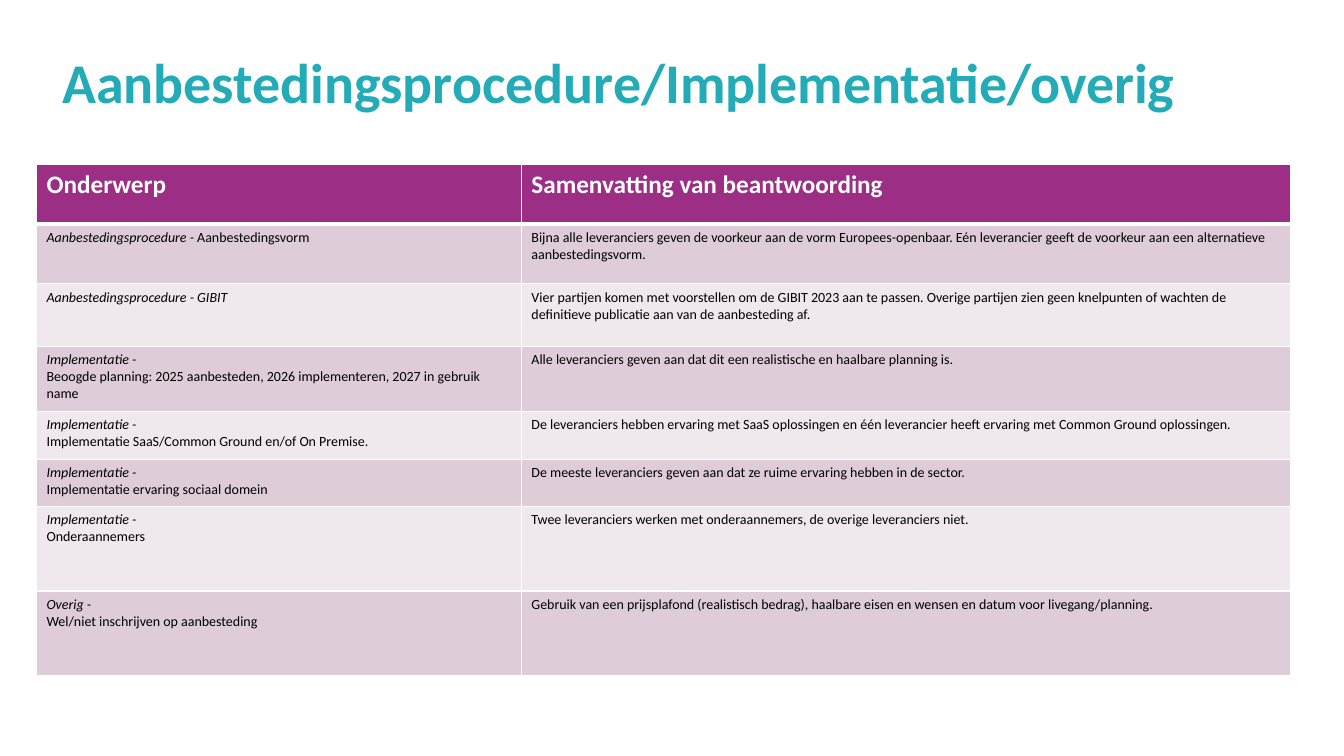
from lxml.etree import SubElement
from pptx import Presentation
from pptx.dml.color import RGBColor
from pptx.enum.text import MSO_ANCHOR
from pptx.oxml.ns import qn
from pptx.util import Cm, Pt


def paint(color_format, color):
    color_format.rgb = RGBColor.from_string(color)


def add_span(para, text, color, **formats):
    span = para.add_run()
    span.text = text
    for name, value in {"name": "Calibri", **formats}.items():
        setattr(span.font, name, value)
    paint(span.font.color, color)


TEAL, PURPLE, WHITE, BLACK = "23ABB7", "9C2F85", "FFFFFF", "000000"
BANDS = ["EFE8ED", "DECDD9"]

deck = Presentation()
deck.slide_width, deck.slide_height = Cm(33.87), Cm(19.05)
page = deck.slides.add_slide(deck.slide_layouts[6])

# Each row: height, italic lead, plain subject, whether the subject starts a new line, summary
rows = [
    (1.5, "", "Onderwerp", False, "Samenvatting van beantwoording"),
    (1.5, "Aanbestedingsprocedure - ", "Aanbestedingsvorm", False,
     "Bijna alle leveranciers geven de voorkeur aan de vorm Europees-openbaar. "
     "Eén leverancier geeft de voorkeur aan een alternatieve aanbestedingsvorm."),
    (1.58, "Aanbestedingsprocedure - GIBIT", "", False,
     "Vier partijen komen met voorstellen om de GIBIT 2023 aan te passen. Overige partijen "
     "zien geen knelpunten of wachten de definitieve publicatie aan van de aanbesteding af."),
    (1.63, "Implementatie -",
     "Beoogde planning: 2025 aanbesteden, 2026 implementeren, 2027 in gebruik name", True,
     "Alle leveranciers geven aan dat dit een realistische en haalbare planning is."),
    (1.22, "Implementatie -", "Implementatie SaaS/Common Ground en/of On Premise.", True,
     "De leveranciers hebben ervaring met SaaS oplossingen en één leverancier "
     "heeft ervaring met Common Ground oplossingen."),
    (1.18, "Implementatie -", "Implementatie ervaring sociaal domein", True,
     "De meeste leveranciers geven aan dat ze ruime ervaring hebben in de sector."),
    (2.13, "Implementatie -", "Onderaannemers", True,
     "Twee leveranciers werken met onderaannemers, de overige leveranciers niet."),
    (2.13, "Overig -", "Wel/niet inschrijven op aanbesteding", True,
     "Gebruik van een prijsplafond (realistisch bedrag), haalbare eisen en wensen "
     "en datum voor livegang/planning."),
]

# Table
frame = page.shapes.add_table(len(rows), 2, Cm(0.92), Cm(4.15), Cm(31.6), Cm(12.87))
table = frame.table
for column, width in zip(table.columns, (12.22, 19.38)):
    column.width = Cm(width)

for index, (height, lead, subject, new_line, summary) in enumerate(rows):
    table.rows[index].height = Cm(height)
    header = index == 0
    color = WHITE if header else BLACK
    formats = {"size": Pt(18 if header else 10), "bold": header}

    # Wording
    topic_cell, summary_cell = table.cell(index, 0), table.cell(index, 1)
    para = topic_cell.text_frame.paragraphs[0]
    if lead:
        add_span(para, lead, color, italic=True, **formats)
    if new_line:
        para = topic_cell.text_frame.add_paragraph()
    if subject:
        add_span(para, subject, color, **formats)
    add_span(summary_cell.text_frame.paragraphs[0], summary, color, **formats)

    # Borders and fill
    for cell in (topic_cell, summary_cell):
        properties = cell._tc.get_or_add_tcPr()
        for side in "LRTB":
            thick = (header and side == "B") or (index == 1 and side == "T")
            line = SubElement(properties, qn(f"a:ln{side}"), w=str(Pt(3 if thick else 1)))
            SubElement(SubElement(line, qn("a:solidFill")), qn("a:srgbClr"), val=WHITE)
        cell.fill.solid()
        paint(cell.fill.fore_color, PURPLE if header else BANDS[index % 2])

# Title
box = page.shapes.add_textbox(Cm(1.32), Cm(0.81), Cm(31.22), Cm(2.67))
box.text_frame.word_wrap = True
box.text_frame.vertical_anchor = MSO_ANCHOR.MIDDLE
para = box.text_frame.paragraphs[0]
para.line_spacing = 0.9
add_span(para, "Aanbestedingsprocedure/Implementatie/overig", TEAL, size=Pt(40), bold=True)

deck.save("out.pptx")
